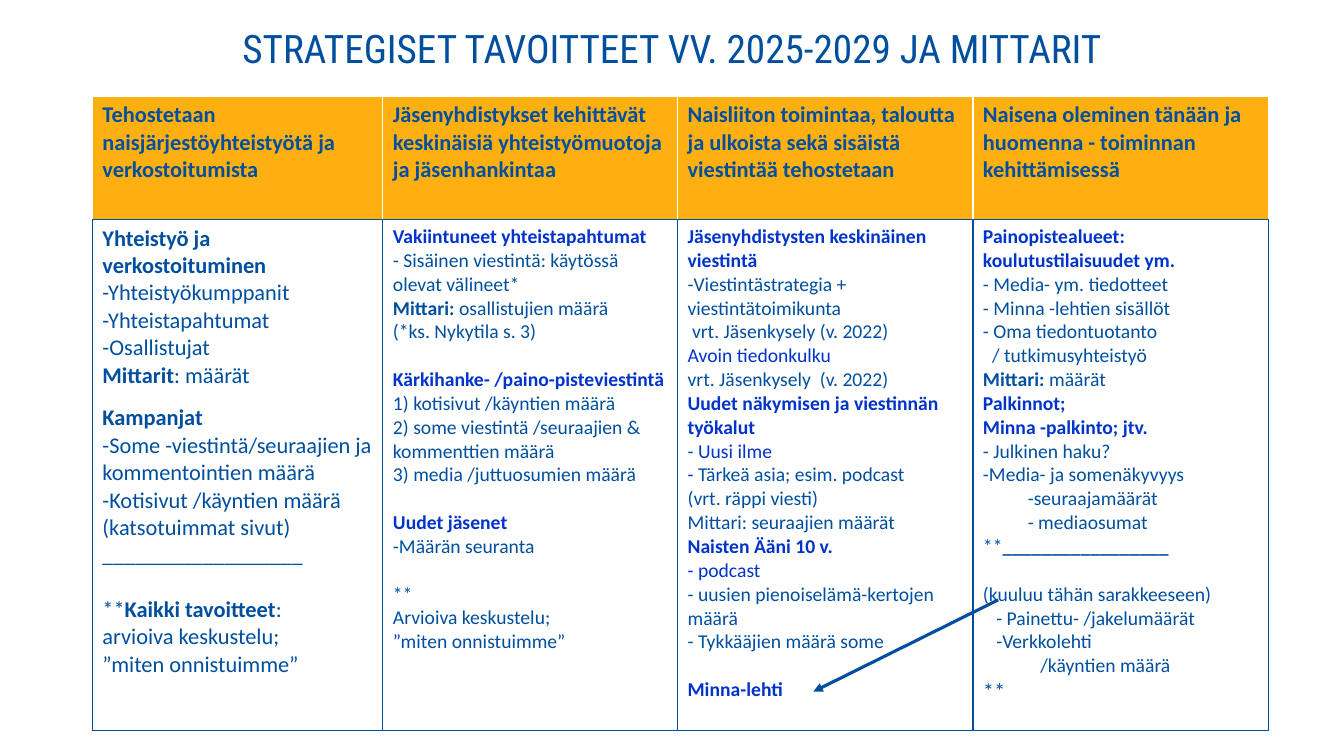
"""Builds the slide of strategic goals 2025-2029 and their measures."""
import dataclasses
import typing

import lxml.etree
import pptx
import pptx.dml.color
import pptx.enum.shapes
import pptx.enum.text
import pptx.oxml.ns
import pptx.util

Pt = pptx.util.Pt
qn = pptx.oxml.ns.qn


@dataclasses.dataclass(frozen=True)
class Theme:
    """Colours, fonts and type sizes."""
    navy: str = "004F9F"
    blue: str = "0033CC"
    amber: str = "FFB011"
    white: str = "FFFFFF"
    title_font: str = "Roboto Condensed"
    body_font: str = "Calibri"
    title_size: float = 28
    large: float = 16
    small: float = 14


THEME = Theme()


class Bit(typing.NamedTuple):
    """A stretch of text in one format."""
    text: str
    bold: bool = False
    color: str = THEME.navy


@dataclasses.dataclass(frozen=True)
class Para:
    """A paragraph with its indent and the gap above it."""
    bits: tuple[Bit, ...]
    indent: float = 0
    before: float = 0
    size: float | None = None


@dataclasses.dataclass(frozen=True)
class Goal:
    """A table column: heading, width, body text size and paragraphs."""
    heading: str
    width: float
    size: float
    paras: tuple[Para, ...]


def bold(text: str) -> Bit:
    """Return bold text."""
    return Bit(text, True)


def key(text: str) -> Bit:
    """Return a bold blue subheading."""
    return Bit(text, True, THEME.blue)


def para(*bits: Bit | str, **layout: float) -> Para:
    """Return a paragraph, taking bare strings as plain text."""
    return Para(tuple(Bit(b) if isinstance(b, str) else b for b in bits), **layout)


LARGE_GAP, SMALL_GAP = 19.5, 17
GOALS = (
    Goal("Tehostetaan naisjärjestöyhteistyötä ja verkostoitumista", 207.5, THEME.large, (
        para(bold("Yhteistyö ja verkostoituminen\n"), "-Yhteistyökumppanit"),
        para("-Yhteistapahtumat\n-Osallistujat\n", bold("Mittarit"), ": määrät"),
        para(bold("Kampanjat\n"), "-Some -viestintä/seuraajien ja kommentointien määrä",
             before=11),
        para("-Kotisivut /käyntien määrä (katsotuimmat sivut)\n__________________"),
        para("**", bold("Kaikki tavoitteet"),
             ":\narvioiva keskustelu;\n”miten onnistuimme”", before=LARGE_GAP),
    )),
    Goal("Jäsenyhdistykset kehittävät keskinäisiä yhteistyömuotoja ja jäsenhankintaa",
         210.5, THEME.small, (
        para(key("Vakiintuneet yhteistapahtumat\n"),
             "- Sisäinen viestintä: käytössä olevat välineet*\n",
             bold("Mittari:"), " osallistujien määrä\n(*ks. Nykytila s. 3)"),
        para(key("Kärkihanke- /paino-pisteviestintä\n"),
             "1) kotisivut /käyntien määrä\n2) some viestintä /seuraajien & "
             "kommenttien määrä\n3) media /juttuosumien määrä", before=SMALL_GAP),
        para(key("Uudet jäsenet"), before=SMALL_GAP),
        para("-Määrän seuranta"),
        para("**\nArvioiva keskustelu;\n”miten onnistuimme”", before=SMALL_GAP),
    )),
    Goal("Naisliiton toimintaa, taloutta ja ulkoista sekä sisäistä viestintää tehostetaan",
         211, THEME.small, (
        para(key("Jäsenyhdistysten keskinäinen viestintä")),
        para("-Viestintästrategia +\nviestintätoimikunta\n vrt. Jäsenkysely (v. 2022)"),
        para(Bit("Avoin tiedonkulku", color=THEME.blue)),
        para("vrt. Jäsenkysely  (v. 2022)"),
        para(key("Uudet näkymisen ja viestinnän työkalut\n"), "- ",
             Bit("Uusi ilme\n- ", color=THEME.blue),
             "Tärkeä asia; esim. podcast\n(vrt. räppi viesti)\nMittari: seuraajien määrät"),
        para(key("Naisten Ääni 10 v.\n"), Bit("- podcast\n", color=THEME.blue),
             "- uusien pienoiselämä-kertojen määrä"),
        para("- Tykkääjien määrä some"),
        para(key("Minna-lehti"), before=SMALL_GAP),
    )),
    Goal("Naisena oleminen tänään ja huomenna - toiminnan kehittämisessä",
         211, THEME.small, (
        para(key("Painopistealueet:\nkoulutustilaisuudet ym.\n"),
             "- Media- ym. tiedotteet\n- Minna -lehtien sisällöt"),
        para("- Oma tiedontuotanto"),
        para("/ tutkimusyhteistyö", indent=6.5),
        para(bold("Mittari: "), "määrät"),
        para(key("Palkinnot;\nMinna -palkinto; jtv.")),
        para("- Julkinen haku?\n-Media- ja somenäkyvyys"),
        para("-seuraajamäärät\n- mediaosumat", indent=32),
        para("**", bold("_________________")),
        para("(kuuluu tähän sarakkeeseen)", before=SMALL_GAP),
        para("- Painettu- /jakelumäärät\n-Verkkolehti", indent=9.5),
        para("/käyntien määrä", indent=41),
        para("**", size=THEME.large),
    )),
)


def add_text(p, text: str, *, size: float, font: str = THEME.body_font,
             color: str = THEME.navy, bold: bool = False) -> None:
    """Append formatted text to a paragraph, with line breaks at newlines."""
    for i, line in enumerate(text.split("\n")):
        if i:
            p.add_line_break()
        if line:
            r = p.add_run()
            r.text = line
            r.font.name, r.font.size, r.font.bold = font, Pt(size), bold
            r.font.color.rgb = pptx.dml.color.RGBColor.from_string(color)


def set_borders(cell, **colors: str) -> None:
    """Give the cell one-point borders, keyed by side, beneath its fill."""
    tcPr = cell._tc.get_or_add_tcPr()
    for i, (side, color) in enumerate(colors.items()):
        ln = lxml.etree.Element(qn(f"a:ln{side}"), w=str(Pt(1)))
        fill = lxml.etree.SubElement(ln, qn("a:solidFill"))
        lxml.etree.SubElement(fill, qn("a:srgbClr"), val=color)
        tcPr.insert(i, ln)


def fill_cell(cell, paras: tuple[Para, ...], size: float) -> None:
    """Write the paragraphs into a cell."""
    tf = cell.text_frame
    for i, item in enumerate(paras):
        p = tf.add_paragraph() if i else tf.paragraphs[0]
        p.space_before = Pt(item.before)
        if item.indent:
            p._p.get_or_add_pPr().set("marL", str(Pt(item.indent)))
        for bit in item.bits:
            add_text(p, bit.text, size=item.size or size, color=bit.color, bold=bit.bold)


def add_title(slide, text: str) -> None:
    """Place and format the title placeholder."""
    sp = slide.shapes.title
    sp.left, sp.top, sp.width, sp.height = Pt(66), Pt(17), Pt(828), Pt(38)
    tf = sp.text_frame
    tf.vertical_anchor = pptx.enum.text.MSO_ANCHOR.MIDDLE
    p = tf.paragraphs[0]
    p.alignment = pptx.enum.text.PP_ALIGN.CENTER
    p.line_spacing = 0.9
    add_text(p, text, size=THEME.title_size, font=THEME.title_font)


def add_goals(slide, goals: tuple[Goal, ...]) -> None:
    """Draw the table with one column per goal."""
    width = Pt(sum(goal.width for goal in goals))
    table = slide.shapes.add_table(2, len(goals), Pt(66), Pt(69), width, Pt(453)).table
    table.horz_banding = False
    table.rows[0].height, table.rows[1].height = Pt(88), Pt(365)
    for i, goal in enumerate(goals):
        table.columns[i].width = Pt(goal.width)
        head, body = table.cell(0, i), table.cell(1, i)
        head.fill.solid()
        head.fill.fore_color.rgb = pptx.dml.color.RGBColor.from_string(THEME.amber)
        body.fill.background()
        fill_cell(head, (para(bold(goal.heading)),), THEME.large)
        fill_cell(body, goal.paras, goal.size)
        set_borders(head, L=THEME.white, R=THEME.white, T=THEME.white, B=THEME.navy)
        set_borders(body, **dict.fromkeys("LRTB", THEME.navy))


def add_arrow(slide, start: tuple[float, float], end: tuple[float, float]) -> None:
    """Draw an arrow between two points."""
    points = (Pt(v) for v in (*start, *end))
    sp = slide.shapes.add_connector(pptx.enum.shapes.MSO_CONNECTOR.STRAIGHT, *points)
    sp.line.width = Pt(2.25)
    sp.line.color.rgb = pptx.dml.color.RGBColor.from_string(THEME.navy)
    lxml.etree.SubElement(sp.line._get_or_add_ln(), qn("a:tailEnd"), type="triangle")
    lxml.etree.SubElement(sp._element.spPr, qn("a:effectLst"))


def main() -> None:
    """Build and save the presentation."""
    prs = pptx.Presentation()
    prs.slide_width, prs.slide_height = Pt(960), Pt(540)
    slide = prs.slides.add_slide(prs.slide_layouts[5])
    add_title(slide, "STRATEGISET TAVOITTEET VV. 2025-2029 JA MITTARIT")
    add_goals(slide, GOALS)
    add_arrow(slide, (713, 428.5), (581, 494))
    prs.save("out.pptx")


if __name__ == "__main__":
    main()
